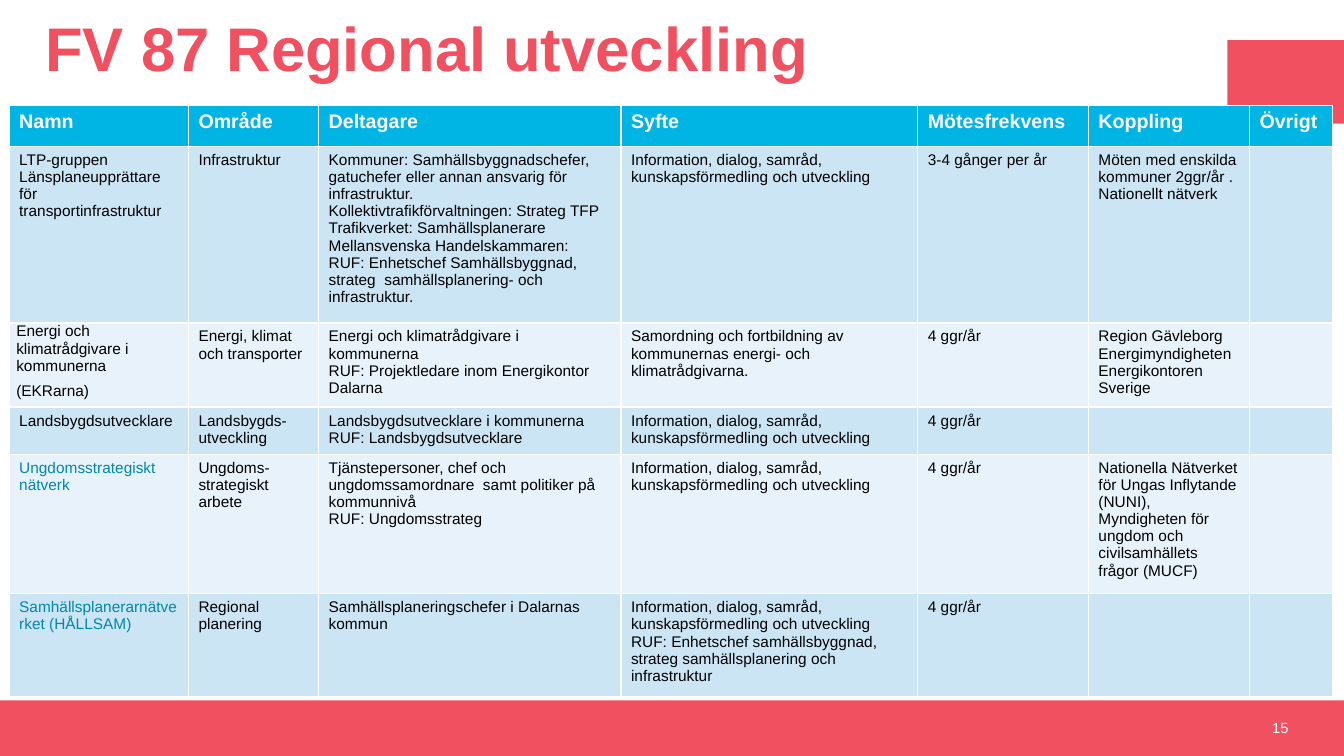
from pptx import Presentation
from pptx.dml.color import RGBColor
from pptx.enum.shapes import MSO_SHAPE
from pptx.enum.text import MSO_ANCHOR, MSO_AUTO_SIZE, PP_ALIGN
from pptx.util import Cm, Pt

RECTANGLE = MSO_SHAPE.RECTANGLE
MIDDLE = MSO_ANCHOR.MIDDLE
NO_AUTOFIT = MSO_AUTO_SIZE.NONE
LEFT, RIGHT = PP_ALIGN.LEFT, PP_ALIGN.RIGHT

CORAL, WHITE, BLACK, LINK = "F15060", "FFFFFF", "000000", "0087AB"
HEADER_FILL, BAND_FILLS = "00B4E4", ("CCE5F5", "E7F2FA")

COLUMN_WIDTHS = (4.52, 3.28, 7.62, 7.48, 4.3, 4.06, 2.09)
ROW_HEIGHTS = (1.04, 4.13, 1.99, 1.12, 3.28, 2.43)

DIALOGUE = "Information, dialog, samråd, kunskapsförmedling och utveckling"
QUARTERLY = "4 ggr/år"
HEADINGS = ("Namn", "Område", "Deltagare", "Syfte", "Mötesfrekvens", "Koppling", "Övrigt")
# \n starts a paragraph, \v breaks a line within one
NETWORKS = (
    ("LTP-gruppen\nLänsplaneupprättare för transportinfrastruktur",
     "Infrastruktur",
     "Kommuner: Samhällsbyggnadschefer, gatuchefer eller annan ansvarig för infrastruktur. "
     "\vKollektivtrafikförvaltningen: Strateg TFP \vTrafikverket: Samhällsplanerare"
     "\vMellansvenska Handelskammaren:"
     "\nRUF: Enhetschef Samhällsbyggnad, strateg  samhällsplanering- och infrastruktur.",
     DIALOGUE,
     "3-4 gånger per år",
     "Möten med enskilda kommuner 2ggr/år .\nNationellt nätverk",
     ""),
    ("Energi och klimatrådgivare i kommunerna\n(EKRarna)",
     "Energi, klimat och transporter",
     "Energi och klimatrådgivare i kommunerna\nRUF: Projektledare inom Energikontor Dalarna",
     "Samordning och fortbildning av kommunernas energi- och klimatrådgivarna.",
     QUARTERLY,
     "Region Gävleborg\vEnergimyndigheten \vEnergikontoren Sverige",
     ""),
    ("Landsbygdsutvecklare",
     "Landsbygds-utveckling",
     "Landsbygdsutvecklare i kommunerna\nRUF: Landsbygdsutvecklare",
     DIALOGUE,
     QUARTERLY,
     "",
     ""),
    ("Ungdomsstrategiskt nätverk",
     "Ungdoms-strategiskt arbete",
     "Tjänstepersoner, chef och ungdomssamordnare  samt politiker på kommunnivå"
     "\nRUF: Ungdomsstrateg",
     DIALOGUE,
     QUARTERLY,
     "Nationella Nätverket för Ungas Inflytande (NUNI), "
     "Myndigheten för ungdom och civilsamhällets frågor (MUCF)",
     ""),
    ("Samhällsplanerarnätverket (HÅLLSAM)",
     "Regional planering",
     "Samhällsplaneringschefer i Dalarnas kommun",
     DIALOGUE + "\nRUF: Enhetschef samhällsbyggnad, strateg samhällsplanering och infrastruktur",
     QUARTERLY,
     "",
     ""),
)
LINKED_NAMES = {NETWORKS[3][0], NETWORKS[4][0]}


def rgb(hex_color):
    return RGBColor.from_string(hex_color)


def set_all(target, values):
    for name, value in values.items():
        setattr(target, name, value)


class SlideBuilder:
    font_name = "Arial"

    def __init__(self, slide):
        self.slide = slide

    def fill_text(self, frame, text, size, color, bold=False, **paragraph_format):
        frame.text = text
        for paragraph in frame.paragraphs:
            set_all(paragraph, paragraph_format)
            for run in paragraph.runs:
                set_all(run.font, {"name": self.font_name, "size": Pt(size), "bold": bold})
                run.font.color.rgb = rgb(color)

    def title(self, text, left, top, width, height):
        heading = self.slide.shapes.title
        set_all(heading, {"left": Cm(left), "top": Cm(top),
                          "width": Cm(width), "height": Cm(height)})
        set_all(heading.text_frame, {"auto_size": NO_AUTOFIT, "vertical_anchor": MIDDLE})
        self.fill_text(heading.text_frame, text, 44, CORAL, True,
                       alignment=LEFT, line_spacing=0.9)

    def block(self, left, top, width, height):
        block = self.slide.shapes.add_shape(RECTANGLE, Cm(left), Cm(top), Cm(width), Cm(height))
        block.shadow.inherit = False
        block.fill.solid()
        block.fill.fore_color.rgb = rgb(CORAL)
        block.line.fill.background()

    def page_number(self, text, left, top, width, height):
        box = self.slide.shapes.add_textbox(Cm(left), Cm(top), Cm(width), Cm(height))
        set_all(box.text_frame, {"word_wrap": True, "vertical_anchor": MIDDLE})
        self.fill_text(box.text_frame, text, 10.5, WHITE, alignment=RIGHT)

    def cell(self, cell, text, fill, size, color, bold=False):
        cell.fill.solid()
        cell.fill.fore_color.rgb = rgb(fill)
        self.fill_text(cell.text_frame, text, size, color, bold)

    def table(self, left, top):
        """Add the network table; its default style supplies the white borders."""
        table = self.slide.shapes.add_table(
            len(ROW_HEIGHTS), len(COLUMN_WIDTHS), Cm(left), Cm(top),
            Cm(sum(COLUMN_WIDTHS)), Cm(sum(ROW_HEIGHTS))).table
        for column, width in zip(table.columns, COLUMN_WIDTHS):
            column.width = Cm(width)
        for row, height in zip(table.rows, ROW_HEIGHTS):
            row.height = Cm(height)
        for column, heading in enumerate(HEADINGS):
            self.cell(table.cell(0, column), heading, HEADER_FILL, 14, WHITE, True)
        for row, network in enumerate(NETWORKS, 1):
            for column, text in enumerate(network):
                color = LINK if text in LINKED_NAMES else BLACK
                self.cell(table.cell(row, column), text, BAND_FILLS[(row - 1) % 2], 11, color)
        advisers = table.cell(2, 0)
        set_all(advisers, {"margin_left": Cm(0.18), "margin_right": Cm(0.18),
                           "margin_top": 0, "margin_bottom": 0})
        for paragraph in advisers.text_frame.paragraphs:
            paragraph.space_after = Pt(6)


def main():
    deck = Presentation()
    set_all(deck, {"slide_width": Cm(33.87), "slide_height": Cm(19.05)})
    page = SlideBuilder(deck.slides.add_slide(deck.slide_layouts[5]))
    page.block(0, 17.65, 33.87, 1.4)
    page.block(30.93, 1.01, 2.94, 2.11)
    page.title("FV 87 Regional utveckling", 0.89, -0.38, 29.5, 3.35)
    page.page_number("15", 25.1, 17.65, 7.62, 1.38)
    page.table(0.23, 2.65)
    deck.save("out.pptx")


if __name__ == "__main__":
    main()
